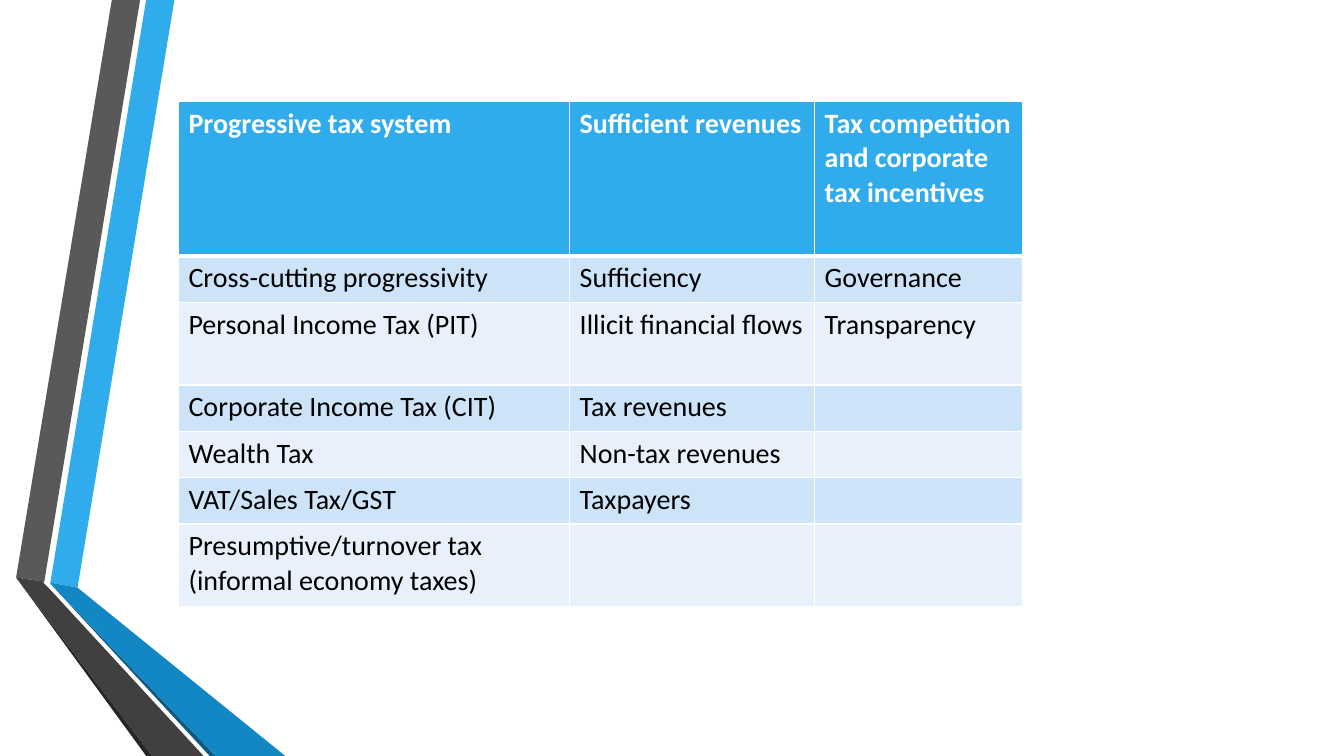
"""Build a slide with a tax topic table beside a folded ribbon."""
import dataclasses
import typing

import pptx
import pptx.dml.color
import pptx.oxml
import pptx.oxml.ns
import pptx.util

PX = 9144
FONT = "Calibri"
COLORS = {
    "blue": "30ACEC", "gray": "595959", "black": "000000", "white": "FFFFFF",
    "dusk": "262626", "navy": "0C5A82", "azure": "1287C3", "coal": "404040",
    "band": "CDE3F8", "pale": "E8F1FB",
}


@dataclasses.dataclass(frozen=True)
class Band:
    color: str
    points: tuple[tuple[int, int], ...]


class Row(typing.NamedTuple):
    height: int
    texts: tuple[str, str, str]


BANDS = (
    Band("blue", ((50, 578), (77, 583), (173, 0), (145, 0))),
    Band("gray", ((139, 0), (111, 0), (16, 573), (44, 577))),
    Band("dusk", ((16, 573), (145, 750), (151, 750))),
    Band("navy", ((50, 579), (208, 750), (214, 750))),
    Band("azure", ((50, 579), (214, 750), (283, 750), (77, 583), (50, 578))),
    Band("coal", ((202, 750), (48, 583), (43, 578), (44, 577), (16, 573), (151, 750))),
)
WIDTHS = (388, 243, 206)
ROWS = (
    Row(153, ("Progressive tax system", "Sufficient revenues",
              "Tax competition and corporate tax incentives")),
    Row(46, ("Cross-cutting progressivity", "Sufficiency", "Governance")),
    Row(82, ("Personal Income Tax (PIT)", "Illicit financial flows", "Transparency")),
    Row(46, ("Corporate Income Tax (CIT)", "Tax revenues", "")),
    Row(46, ("Wealth Tax", "Non-tax revenues", "")),
    Row(46, ("VAT/Sales Tax/GST", "Taxpayers", "")),
    Row(82, ("Presumptive/turnover tax (informal economy taxes)", "", "")),
)


def paint(fill: typing.Any, color: str) -> None:
    fill.solid()
    fill.fore_color.rgb = pptx.dml.color.RGBColor.from_string(COLORS[color])


def draw_band(slide: typing.Any, band: Band) -> None:
    first, *rest = band.points
    pen = slide.shapes.build_freeform(*first, scale=PX)
    pen.add_line_segments(rest, close=True)
    shape = pen.convert_to_shape()
    shape.shadow.inherit = False
    paint(shape.fill, band.color)
    shape.line.fill.background()


def edge(cell: typing.Any, side: str, width: int) -> None:
    props = cell._tc.get_or_add_tcPr()
    props.append(pptx.oxml.parse_xml(
        f'<a:ln{side} {pptx.oxml.ns.nsdecls("a")} w="{pptx.util.Pt(width)}">'
        f'<a:solidFill><a:srgbClr val="{COLORS["white"]}"/></a:solidFill>'
        f'</a:ln{side}>'))


def draw_cell(cell: typing.Any, text: str, index: int) -> None:
    head = index == 0
    widths = {"L": 1, "R": 1, "T": 3 if index == 1 else 1, "B": 3 if head else 1}
    for side, width in widths.items():
        edge(cell, side, width)
    paint(cell.fill, "blue" if head else ("pale", "band")[index % 2])
    cell.text_frame.text = text
    font = cell.text_frame.paragraphs[0].font
    font.size = pptx.util.Pt(20)
    for run in cell.text_frame.paragraphs[0].runs:
        run.font.name = FONT
        run.font.size = pptx.util.Pt(20)
        run.font.bold = head
        paint(run.font.fill, "white" if head else "black")


def draw_table(slide: typing.Any, left: int, top: int) -> None:
    high = sum(row.height for row in ROWS)
    frame = slide.shapes.add_table(len(ROWS), len(WIDTHS), left * PX, top * PX,
                                   sum(WIDTHS) * PX, high * PX)
    table = frame.table
    for column, width in zip(table.columns, WIDTHS):
        column.width = width * PX
    for index, row in enumerate(ROWS):
        table.rows[index].height = row.height * PX
        for place, text in enumerate(row.texts):
            draw_cell(table.cell(index, place), text, index)


def main() -> None:
    deck = pptx.Presentation()
    deck.slide_width, deck.slide_height = 1333 * PX, 750 * PX
    slide = deck.slides.add_slide(deck.slide_layouts[6])
    paint(slide.background.fill, "white")
    for band in BANDS:
        draw_band(slide, band)
    draw_table(slide, 177, 101)
    deck.save("out.pptx")


if __name__ == "__main__":
    main()
